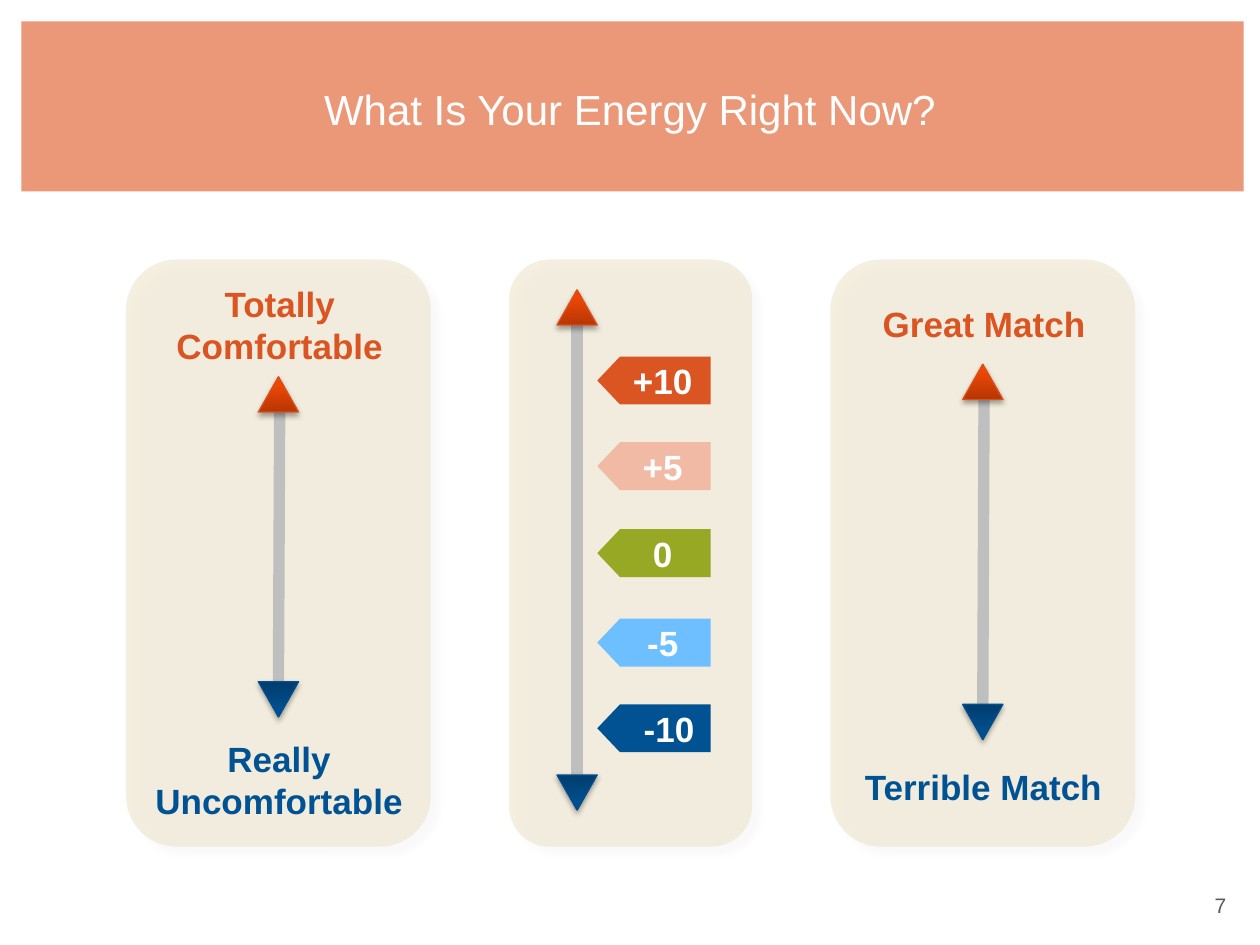
import pptx
import pptx.dml.color
import pptx.enum.shapes
import pptx.enum.text
import pptx.oxml
import pptx.oxml.ns
import pptx.util
from pptx.util import Inches

RGBColor = pptx.dml.color.RGBColor
SHAPE = pptx.enum.shapes.MSO_SHAPE
ALIGN = pptx.enum.text.PP_ALIGN

WHITE = RGBColor(0xFF, 0xFF, 0xFF)
SALMON = RGBColor(0xEB, 0x98, 0x78)
CREAM = RGBColor(0xED, 0xE4, 0xCA)
SHAFT_GREY = RGBColor(0xBF, 0xBF, 0xBF)
NUMBER_GREY = RGBColor(0x59, 0x59, 0x59)
ORANGE = RGBColor(0xDA, 0x55, 0x21)
PEACH = RGBColor(0xF1, 0xBA, 0xA5)
GREEN = RGBColor(0x97, 0xA8, 0x25)
SKY = RGBColor(0x6E, 0xBF, 0xFF)
NAVY = RGBColor(0x00, 0x52, 0x93)
ORANGE_EDGE = RGBColor(0xDA, 0x51, 0x1C)
NAVY_EDGE = RGBColor(0x00, 0x50, 0x90)
ORANGE_SHADES = [RGBColor(0xB7, 0x36, 0x04), RGBColor(0xEE, 0x47, 0x05), RGBColor(0xF4, 0x45, 0x01)]
NAVY_SHADES = [RGBColor(0x00, 0x3D, 0x6E), RGBColor(0x00, 0x4F, 0x8E), RGBColor(0x00, 0x50, 0x8F)]

HEAD_WIDTH, HEAD_HEIGHT = 0.32, 0.28
TAG_WIDTH, TAG_HEIGHT = 0.9, 0.38
PANEL_TOP, PANEL_HEIGHT = 2.06, 4.66
LINE_HEIGHT = 0.44


def drawing_xml(text):
    return pptx.oxml.parse_xml(text.replace(">", f" {pptx.oxml.ns.nsdecls('a')}>", 1))


def add_shadow(shape, opacity, blur, distance, angle):
    """Cast a black shadow: opacity in percent, lengths in points, angle in degrees."""
    shape.element.spPr.append(drawing_xml(
        f'<a:effectLst><a:outerShdw blurRad="{pptx.util.Pt(blur)}" dist="{pptx.util.Pt(distance)}" '
        f'dir="{angle * 60000}" algn="tl" rotWithShape="0"><a:srgbClr val="000000">'
        f'<a:alpha val="{opacity * 1000}"/></a:srgbClr></a:outerShdw></a:effectLst>'))


def add_filled(page, preset, left, top, width, height, colour):
    shape = page.shapes.add_shape(preset, Inches(left), Inches(top), Inches(width), Inches(height))
    shape.fill.solid()
    shape.fill.fore_color.rgb = colour
    shape.line.fill.background()
    return shape


def add_text(page, text, left, top, width, height, size, colour, bold=False, align=ALIGN.CENTER):
    box = page.shapes.add_textbox(Inches(left), Inches(top), Inches(width), Inches(height))
    frame = box.text_frame
    frame.word_wrap = True
    frame.vertical_anchor = pptx.enum.text.MSO_ANCHOR.MIDDLE
    para = frame.paragraphs[0]
    para.text = text
    para.alignment = align
    para.font.name = "Arial"
    para.font.size = pptx.util.Pt(size)
    para.font.bold = bold
    para.font.color.rgb = colour


def add_header(page, left, top, width, height):
    band = add_filled(page, SHAPE.RECTANGLE, left, top, width, height, SALMON)
    band.shadow.inherit = False
    add_text(page, "What Is Your Energy Right Now?", 0.5, 0.3, 9, 1.12, 24, WHITE)


def add_panel(page, left, width):
    panel = add_filled(page, SHAPE.ROUNDED_RECTANGLE, left, PANEL_TOP, width, PANEL_HEIGHT, CREAM)
    colour = panel.element.spPr.find(".//" + pptx.oxml.ns.qn("a:srgbClr"))
    colour.append(drawing_xml('<a:alpha val="59000"></a:alpha>'))
    add_shadow(panel, 3, 4, 6, 45)


def add_arrow_head(page, centre, top, shades, edge, rotation):
    head = page.shapes.add_shape(
        SHAPE.ISOSCELES_TRIANGLE, Inches(centre - HEAD_WIDTH / 2), Inches(top),
        Inches(HEAD_WIDTH), Inches(HEAD_HEIGHT))
    head.rotation = rotation
    stops = "".join(f'<a:gs pos="{position * 1000}"><a:srgbClr val="{shade}"/></a:gs>'
                    for position, shade in zip((0, 80, 100), shades))
    head.element.spPr.prstGeom.addnext(drawing_xml(
        f'<a:gradFill rotWithShape="1"><a:gsLst>{stops}</a:gsLst>'
        '<a:lin ang="16200000" scaled="0"/></a:gradFill>'))
    head.line.color.rgb = edge
    head.line.width = pptx.util.Pt(0.75)
    add_shadow(head, 35, 3.1, 1.8, 90)


def add_scale_arrow(page, centre, top, bottom, lean=0):
    """Draw a two-headed arrow; lean shifts the top of its shaft to the right."""
    head_top = bottom - HEAD_HEIGHT
    shaft = page.shapes.add_connector(
        pptx.enum.shapes.MSO_CONNECTOR.STRAIGHT, Inches(centre + lean),
        Inches(top + HEAD_HEIGHT - 0.01), Inches(centre), Inches(head_top))
    shaft.line.color.rgb = SHAFT_GREY
    shaft.line.width = pptx.util.Pt(6.5)
    shaft.element.spPr.append(drawing_xml("<a:effectLst></a:effectLst>"))
    add_arrow_head(page, centre, head_top, NAVY_SHADES, NAVY_EDGE, 180)
    add_arrow_head(page, centre, top, ORANGE_SHADES, ORANGE_EDGE, 0)


def add_range_panel(page, left, width, best, worst, arrow_top, arrow_bottom):
    """Place a panel whose arrow runs between two (label, top, height) captions."""
    add_panel(page, left, width)
    add_scale_arrow(page, left + width / 2, arrow_top, arrow_bottom, lean=0.01)
    for (label, top, height), colour, inset, text_width in (
            (best, ORANGE, 0.18, 2.08), (worst, NAVY, 0.08, 2.27)):
        add_text(page, label, left + inset, top, text_width, height, 20, colour, bold=True)


def add_score_panel(page, left, width):
    add_panel(page, left, width)
    add_scale_arrow(page, left + 0.54, 2.3, 6.43)
    tag_centre = left + 1.15
    for label, colour, middle, text_centre in (
            ("+10", ORANGE, 3.02, 5.26), ("+5", PEACH, 3.7, 5.26), ("0", GREEN, 4.39, 5.26),
            ("-5", SKY, 5.1, 5.26), ("-10", NAVY, 5.78, 5.31)):
        tag = add_filled(page, SHAPE.FLOWCHART_OFFPAGE_CONNECTOR, tag_centre - TAG_HEIGHT / 2,
                         middle - TAG_WIDTH / 2, TAG_HEIGHT, TAG_WIDTH, colour)
        tag.rotation = 90
        tag.shadow.inherit = False
        add_text(page, label, text_centre - 0.38, middle - LINE_HEIGHT / 2, 0.76, LINE_HEIGHT,
                 20, WHITE, bold=True)


def main():
    deck = pptx.Presentation()
    deck.slide_width, deck.slide_height = Inches(10), Inches(7.5)
    page = deck.slides.add_slide(deck.slide_layouts[6])
    add_header(page, 0.17, 0.17, 9.7, 1.35)
    add_text(page, "7", 7.5, 7.02, 2.33, 0.32, 12, NUMBER_GREY, align=ALIGN.RIGHT)
    add_range_panel(page, 1, 2.42, ("Totally Comfortable", 2.19, 0.77),
                    ("Really Uncomfortable", 5.8, 0.77), 2.99, 5.69)
    add_range_panel(page, 6.59, 2.42, ("Great Match", 2.35, LINE_HEIGHT),
                    ("Terrible Match", 6.02, LINE_HEIGHT), 2.89, 5.87)
    add_score_panel(page, 4.04, 1.93)
    deck.save("out.pptx")


if __name__ == "__main__":
    main()
